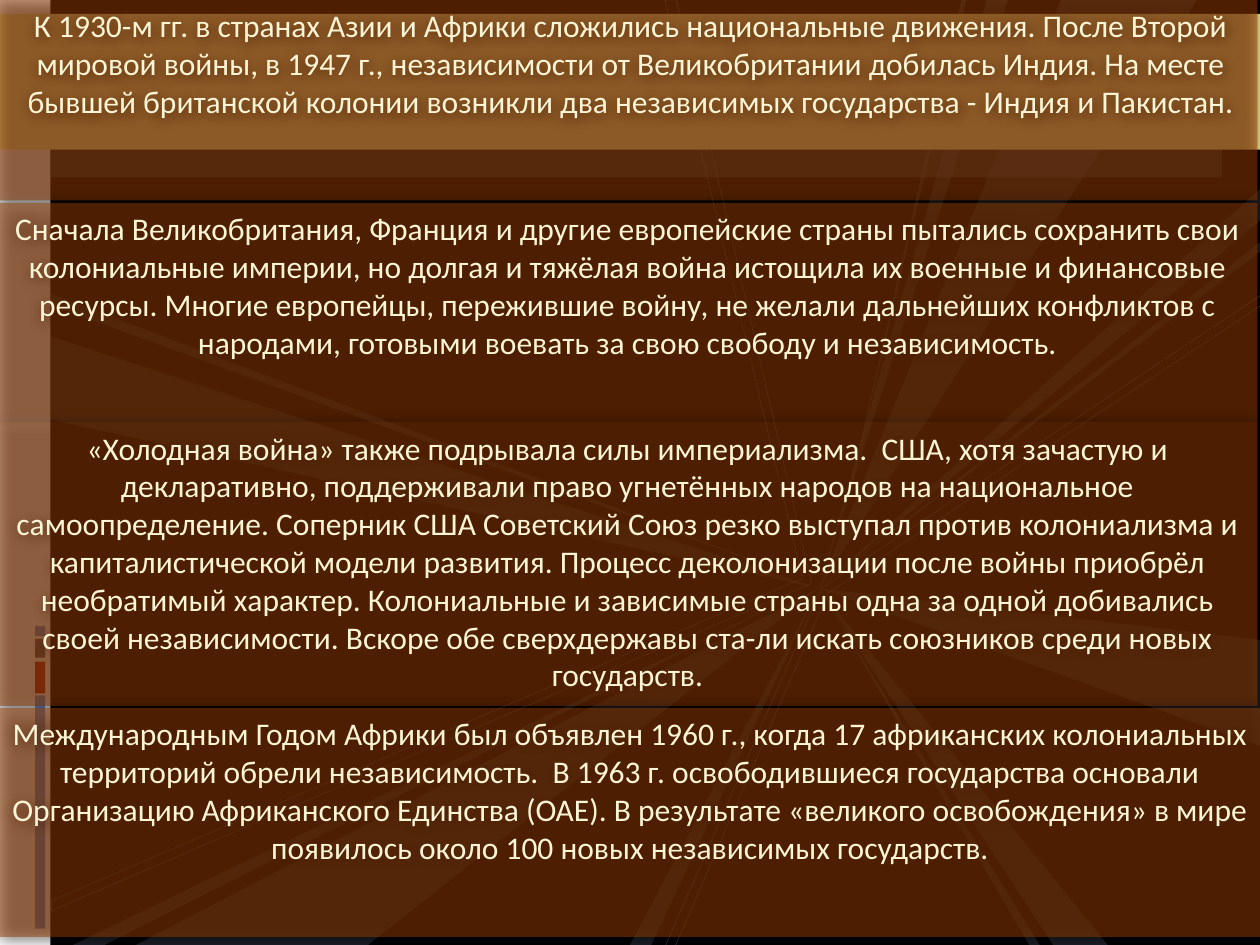
from typing import NamedTuple

from lxml.etree import SubElement
from pptx import Presentation
from pptx.dml.color import RGBColor
from pptx.enum.shapes import MSO_SHAPE
from pptx.enum.text import MSO_ANCHOR, MSO_AUTO_SIZE, PP_ALIGN
from pptx.oxml.ns import qn
from pptx.util import Cm, Pt

WIDE, HIGH = 25.4, 19.05
HUB = (16.51, 11.86)
EDGE = 1.02
COLORS = {
    "back": "000000", "strip": "FFFFFF", "blue": "7598D9", "red": "B32C16",
    "slate": "575F6D", "ray": "606D83", "bar": "626D81", "gold": "FFF39D",
    "panel": "9A3D01", "text": "FDF5D5",
}


class Box(NamedTuple):
    x: float
    y: float
    w: float
    h: float
    color: str
    alpha: int = 100


class Ray(NamedTuple):
    """A thin triangle from two points on the slide edge to a tip."""
    start: tuple
    end: tuple
    tip: tuple = HUB


class Panel(NamedTuple):
    box: Box
    text: str


SIDE = [
    Box(0, 0, EDGE, HIGH, "strip"),
    Box(0.71, 14.02, 0.2, 4.7, "blue"),
    Box(0.71, 13.34, 0.2, 0.64, "red"),
    Box(0.71, 12.88, 0.2, 0.38, "slate"),
    Box(0.71, 12.62, 0.2, 0.2, "blue"),
]
BARS = [
    Box(EDGE, 1.12, 23.62, 2.46, "bar", 40),
    Box(0, 0.28, WIDE, 2.74, "gold"),
]
BENDS = [
    [(13.41, 19.08), (16.56, 11.86), (25.43, 5.94),
     (25.43, 6.15), (16.69, 11.96), (13.61, 19.08)],
    [(1.04, 18.16), (1.04, 18.36), (16.36, 11.76),
     (13.64, 0), (13.41, 0), (16.18, 11.66)],
]
RAYS = [
    Ray((19.48, 0), (19.38, 0), (16.74, 11.56)),
    Ray((21.39, 0), (24.13, 0)),
    Ray((WIDE, 12.9), (WIDE, 15.04)),
    Ray((20.32, 0), (19.89, 0)),
    Ray((21.23, HIGH), (22.33, HIGH)),
    Ray((20.96, HIGH), (20.75, HIGH)),
    Ray((WIDE, 3.81), (WIDE, 4.45)),
    Ray((WIDE, 4.88), (WIDE, 5.08)),
    Ray((2.74, HIGH), (7.42, HIGH)),
    Ray((1.47, HIGH), (2.11, HIGH), (16.31, 11.86)),
    Ray((EDGE, 6.78), (EDGE, 8.46)),
    Ray((EDGE, 5.92), (EDGE, 6.15), (16.69, 11.86)),
    Ray((12.7, HIGH), (13.13, HIGH)),
]
PANELS = [
    Panel(Box(-0.05, 0, WIDE, 4.04, "panel", 50),
          "К 1930-м гг. в странах Азии и Африки сложились национальные движения. "
          "После Второй мировой войны, в 1947 г., независимости от Великобритании "
          "добилась Индия. На месте бывшей британской колонии возникли два "
          "независимых государства - Индия и Пакистан."),
    Panel(Box(-0.05, 4.09, WIDE, 4.42, "panel", 50),
          "Сначала Великобритания, Франция и другие европейские страны пытались "
          "сохранить свои колониальные империи, но долгая и тяжёлая война истощила "
          "их военные и финансовые ресурсы. Многие европейцы, пережившие войну, не "
          "желали дальнейших конфликтов с народами, готовыми воевать за свою "
          "свободу и независимость."),
    Panel(Box(-0.05, 8.51, WIDE, 5.72, "panel", 50),
          "«Холодная война» также подрывала силы империализма.  США, хотя зачастую "
          "и декларативно, поддерживали право угнетённых народов на национальное "
          "самоопределение. Соперник США Советский Союз резко выступал против "
          "колониализма и капиталистической модели развития. Процесс деколонизации "
          "после войны приобрёл необратимый характер. Колониальные и зависимые "
          "страны одна за одной добивались своей независимости. Вскоре обе "
          "сверхдержавы ста-ли искать союзников среди новых государств."),
    Panel(Box(0, 14.27, WIDE, 4.62, "panel", 50),
          "Международным Годом Африки был объявлен 1960 г., когда 17 африканских "
          "колониальных территорий обрели независимость.  В 1963 г. освободившиеся "
          "государства основали Организацию Африканского Единства (ОАЕ). В "
          "результате «великого освобождения» в мире появилось около 100 новых "
          "независимых государств."),
]


def rgb(name: str) -> RGBColor:
    return RGBColor.from_string(COLORS[name])


def fade(shape, route: str, alpha: int) -> None:
    """Set the opacity, in percent, of the colour found at route."""
    for node in shape._element.spPr.xpath(route + "/a:srgbClr"):
        SubElement(node, qn("a:alpha"), val=str(alpha * 1000))


def paint(shape, color: str, alpha: int = 100) -> None:
    shape.shadow.inherit = False
    shape.fill.solid()
    shape.fill.fore_color.rgb = rgb(color)
    shape.line.fill.background()
    if alpha < 100:
        fade(shape, "./a:solidFill", alpha)


def add_box(slide, box: Box):
    shape = slide.shapes.add_shape(
        MSO_SHAPE.RECTANGLE, Cm(box.x), Cm(box.y), Cm(box.w), Cm(box.h))
    paint(shape, box.color, box.alpha)
    return shape


def add_path(slide, points):
    spots = [(Cm(x), Cm(y)) for x, y in points]
    pen = slide.shapes.build_freeform(*spots[0])
    pen.add_line_segments(spots[1:], close=True)
    return pen.convert_to_shape()


def add_ray(slide, ray: Ray) -> None:
    paint(add_path(slide, ray), "ray", 30)


def add_bend(slide, points: list) -> None:
    shape = add_path(slide, points)
    shape.shadow.inherit = False
    shape.fill.background()
    shape.line.color.rgb = rgb("blue")
    shape.line.width = Pt(0.25)
    fade(shape, "./a:ln/a:solidFill", 53)


def cast(shape) -> None:
    """Give the shape a soft black shadow just below it."""
    glow = shape._element.spPr.find(qn("a:effectLst"))
    outer = SubElement(glow, qn("a:outerShdw"), blurRad=str(Pt(8.5)),
                       dist=str(Pt(1)), dir="5400000", rotWithShape="0")
    SubElement(outer, qn("a:srgbClr"), val=COLORS["back"])


def write(shape, text: str, *, size: float = 18, font: str = "Calibri",
          color: str = "text", left: float = 0.25, low: float = 0.13,
          indent: float = 0) -> None:
    frame = shape.text_frame
    frame.word_wrap = True
    frame.auto_size = MSO_AUTO_SIZE.NONE
    frame.vertical_anchor = MSO_ANCHOR.TOP
    frame.margin_left, frame.margin_right = Cm(left), Cm(0.25)
    frame.margin_top, frame.margin_bottom = Cm(0.13), Cm(low)
    para = frame.paragraphs[0]
    para.alignment = PP_ALIGN.CENTER
    para.space_before = Pt(0)
    props = para._p.get_or_add_pPr()
    props.set("marL", str(Cm(indent)))
    props.set("indent", "0")
    SubElement(props, qn("a:buNone"))
    run = para.add_run()
    run.text = text
    run.font.size = Pt(size)
    run.font.name = font
    run.font.color.rgb = rgb(color)


def fill_body(slide, panel: Panel) -> None:
    """Use the body placeholder as a panel, in front of the backdrop."""
    body, box = slide.placeholders[1], panel.box
    body.left, body.top = Cm(box.x), Cm(box.y)
    body.width, body.height = Cm(box.w), Cm(box.h)
    paint(body, box.color, box.alpha)
    cast(body)
    write(body, panel.text, left=0.23, low=0, indent=0.15)
    slide.shapes._spTree.append(body._element)


def add_panel(slide, panel: Panel) -> None:
    shape = add_box(slide, panel.box)
    cast(shape)
    write(shape, panel.text)


def main() -> None:
    deck = Presentation()
    deck.slide_width, deck.slide_height = Cm(WIDE), Cm(HIGH)
    slide = deck.slides.add_slide(deck.slide_layouts[1])
    slide.background.fill.solid()
    slide.background.fill.fore_color.rgb = rgb("back")
    title = slide.shapes.title._element
    title.getparent().remove(title)

    for draw, items in ((add_box, SIDE), (add_bend, BENDS),
                        (add_ray, RAYS), (add_box, BARS)):
        for item in items:
            draw(slide, item)
    fill_body(slide, PANELS[0])
    for panel in PANELS[1:]:
        add_panel(slide, panel)
    deck.save("out.pptx")


if __name__ == "__main__":
    main()
